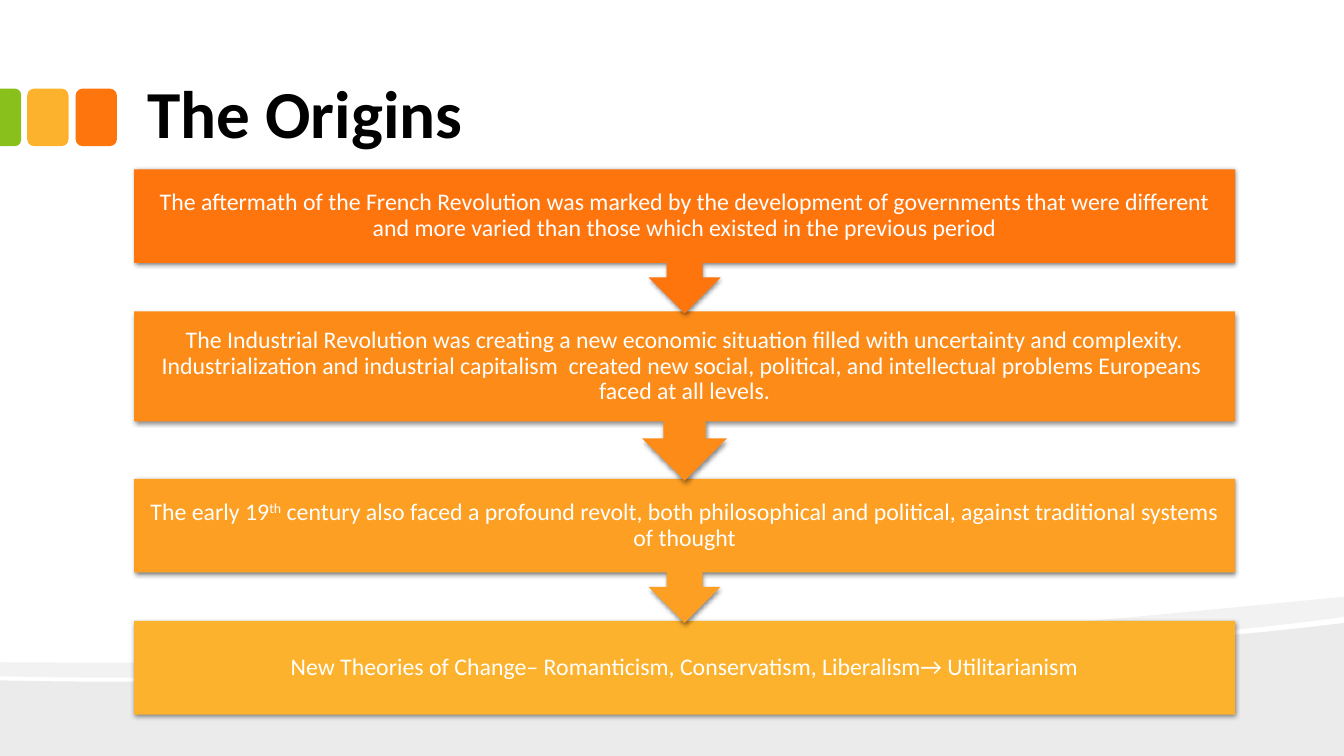
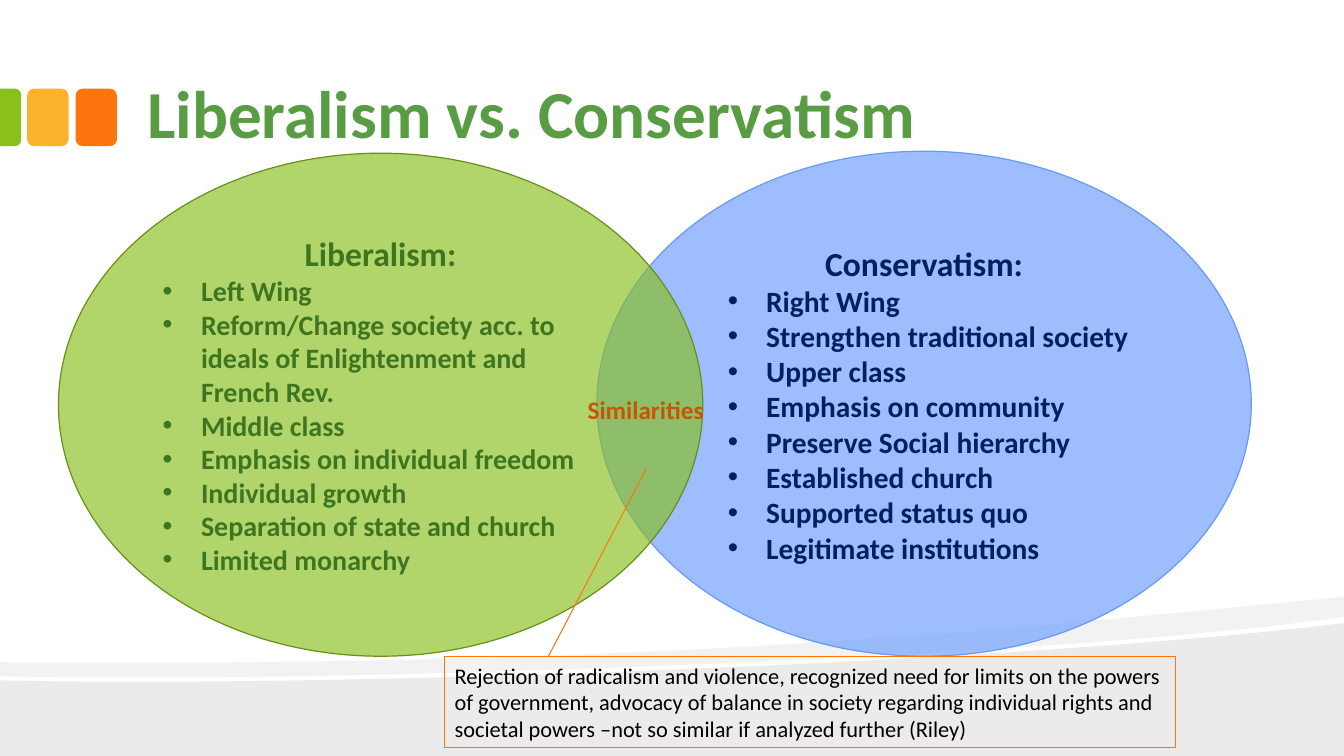
from dataclasses import dataclass
from itertools import accumulate

from lxml.etree import SubElement
from pptx import Presentation
from pptx.dml.color import RGBColor
from pptx.enum.shapes import MSO_CONNECTOR as Link, MSO_SHAPE as Shp
from pptx.enum.text import MSO_ANCHOR as Anchor, MSO_AUTO_SIZE as AutoSize, PP_ALIGN as Align
from pptx.oxml.ns import qn
from pptx.util import Emu, Inches, Pt

FONT = "Calibri"
ORANGE, AMBER, GREEN, BLUE = "FE750E", "FCB22C", "89C01C", "6699FF"
BLACK, WHITE = "000000", "FFFFFF"
WIDTH, HEIGHT = 13.33, 7.5
Point = tuple[float, float]


@dataclass(frozen=True)
class Box:
    """A place on the slide, in inches."""
    x: float
    y: float
    w: float
    h: float


@dataclass(frozen=True)
class Style:
    """The look of a run of text."""
    size: float
    color: str
    bold: bool = False


@dataclass(frozen=True)
class Step:
    """One stage of the flow; odd-numbered pieces of the text are superscript."""
    pieces: tuple[str, ...]
    height: float
    color: str
    kind: Shp = Shp.DOWN_ARROW_CALLOUT


@dataclass(frozen=True)
class Circle:
    """One side of the comparison."""
    box: Box
    fill: str
    opacity: int
    line: str
    ink: str
    size: float
    margin: float
    heading: str
    items: tuple[str, ...]


STEPS = (
    Step(("The aftermath of the French Revolution was marked by the development of governments "
          "that were different and more varied than those which existed in the previous period",),
         1.43, ORANGE),
    Step(("The Industrial Revolution was creating a new economic situation filled with uncertainty "
          "and complexity. Industrialization and industrial capitalism  created new social, "
          "political, and intellectual problems Europeans  faced at all levels.",),
         1.68, "FD8B18"),
    Step(("The early 19", "th", " century also faced a profound revolt, both philosophical and "
          "political, against traditional systems of thought"),
         1.43, "FD9F22"),
    Step(("New Theories of Change– Romanticism, Conservatism, Liberalism→ Utilitarianism",),
         0.93, AMBER, Shp.RECTANGLE),
)

CIRCLES = (
    Circle(Box(5.92, 1.5, 6.49, 5.01), BLUE, 64, BLUE, "002060", 21, 0.63, "Conservatism:",
           ("Right Wing", "Strengthen traditional society", "Upper class",
            "Emphasis on community", "Preserve Social hierarchy", "Established church",
            "Supported status quo", "Legitimate institutions")),
    Circle(Box(0.58, 1.52, 6.39, 4.99), GREEN, 65, "679015", "3E7520", 20, 0.38, "Liberalism:",
           ("Left Wing",
            "Reform/Change society acc. to ideals of Enlightenment and French Rev.",
            "Middle class", "Emphasis on individual freedom", "Individual growth",
            "Separation of state and church", "Limited monarchy")),
)


def rgb(color: str) -> RGBColor:
    """Turn a hex string into a colour."""
    return RGBColor.from_string(color)


def place(box: Box) -> tuple[Emu, ...]:
    """Return a box as lengths."""
    return tuple(Inches(v) for v in (box.x, box.y, box.w, box.h))


def paint(s, fill: str | None, opacity: int = 100, line: str | None = None) -> None:
    """Set the fill and outline of a shape and drop its shadow."""
    s.shadow.inherit = False
    if fill:
        s.fill.solid()
        s.fill.fore_color.rgb = rgb(fill)
        if opacity < 100:
            color = s.element.spPr.find(qn("a:solidFill"))[0]
            SubElement(color, qn("a:alpha"), val=str(opacity * 1000))
    else:
        s.fill.background()
    if line:
        s.line.color.rgb = rgb(line)
        s.line.width = Pt(0.85)
    else:
        s.line.fill.background()


def add_box(slide, kind: Shp, box: Box, fill: str | None, opacity: int = 100,
            line: str | None = None):
    """Add a painted preset shape."""
    s = slide.shapes.add_shape(kind, *place(box))
    paint(s, fill, opacity, line)
    return s


def add_run(p, text: str, style: Style, raised: bool = False) -> None:
    """Append a formatted run to a paragraph."""
    r = p.add_run()
    r.text = text
    r.font.name, r.font.size, r.font.bold = FONT, Pt(style.size), style.bold
    r.font.color.rgb = rgb(style.color)
    if raised:
        r._r.get_or_add_rPr().set("baseline", "30000")


def set_margins(tf, x: float, y: float) -> None:
    """Set the side and the top and bottom margins of a text frame."""
    tf.margin_left = tf.margin_right = Inches(x)
    tf.margin_top = tf.margin_bottom = Inches(y)


def add_bullet(p, margin: float) -> None:
    """Give a paragraph a hanging bullet."""
    pPr = p._p.get_or_add_pPr()
    pPr.set("marL", str(Inches(margin)))
    pPr.set("indent", str(-Inches(0.38)))
    SubElement(pPr, qn("a:buFont"), typeface="Arial")
    SubElement(pPr, qn("a:buChar"), char="•")


def add_soft_shadow(s) -> None:
    """Give a shape a soft shadow straight below it."""
    effects = s.element.spPr.find(qn("a:effectLst"))
    shadow = SubElement(effects, qn("a:outerShdw"), blurRad=str(Pt(3.5)), dist=str(Pt(1.1)),
                        dir="5400000", algn="ctr", rotWithShape="0")
    color = SubElement(shadow, qn("a:srgbClr"), val=BLACK)
    SubElement(color, qn("a:alpha"), val="45000")


def curve(a: Point, b: Point, c: Point, d: Point, steps: int = 24) -> list[Point]:
    """Sample a cubic curve, leaving out its first point."""
    points = []
    for i in range(1, steps + 1):
        t = i / steps
        weights = ((1 - t) ** 3, 3 * t * (1 - t) ** 2, 3 * t * t * (1 - t), t ** 3)
        points.append(tuple(sum(k * q[axis] for k, q in zip(weights, (a, b, c, d)))
                            for axis in (0, 1)))
    return points


def add_wave(slide, points: list[Point], opacity: int):
    """Add a closed translucent black outline."""
    start, *rest = [(Inches(x), Inches(y)) for x, y in points]
    builder = slide.shapes.build_freeform(*start)
    builder.add_line_segments(rest, close=True)
    s = builder.convert_to_shape()
    paint(s, BLACK, opacity)
    return s


def decorate_layout(layout, slide) -> None:
    """Put the waves, the colour tabs and the title's place on the layout."""
    ground = [(WIDTH, 6.18), (WIDTH, HEIGHT), (0, HEIGHT), (0, 6.75)]
    ground += curve((0, 6.75), (3.52, 6.83), (10.42, 6.55), (WIDTH, 6.18))
    band = [(WIDTH, 5.92), (WIDTH, 6.12)]
    band += curve((WIDTH, 6.12), (12.55, 6.23), (11.49, 6.33), (10.29, 6.41))
    band += curve((10.29, 6.41), (6.98, 6.63), (2.58, 6.77), (0, 6.71))
    band += [(0, 6.57)]
    band += curve((0, 6.57), (6.52, 6.62), (9.71, 6.27), (WIDTH, 5.92))
    edge_tab = add_box(slide, Shp.ROUND_2_SAME_RECTANGLE, Box(-0.18, 1.06, 0.57, 0.21), GREEN)
    edge_tab.rotation = 90
    edge_tab.adjustments[0] = 0.292
    decor = [add_wave(slide, ground, 8), add_wave(slide, band, 5), edge_tab]
    decor += [add_box(slide, Shp.ROUNDED_RECTANGLE, Box(x, 0.88, 0.41, 0.57), color)
              for x, color in ((0.27, AMBER), (0.75, ORANGE))]
    for i, s in enumerate(decor):
        layout.shapes.element.insert(2 + i, s.element)

    title = layout.placeholders[0]
    title.left, title.top, title.width, title.height = place(Box(1.33, 0.58, 10.66, 1))
    tf = title.text_frame
    tf.vertical_anchor, tf.auto_size = Anchor.BOTTOM, AutoSize.NONE
    set_margins(tf, 0.13, 0.07)


def set_title(slide, text: str, color: str) -> None:
    """Write the slide's title."""
    p = slide.shapes.title.text_frame.paragraphs[0]
    p.alignment = Align.LEFT
    add_run(p, text, Style(48, color, True))


def add_step(slide, step: Step, top: float) -> None:
    """Draw one stage of the flow."""
    s = add_box(slide, step.kind, Box(1.33, top, 10.92, step.height), step.color)
    add_soft_shadow(s)
    tf = s.text_frame
    tf.word_wrap, tf.vertical_anchor = True, Anchor.MIDDLE
    set_margins(tf, 0.13, 0.13)
    p = tf.paragraphs[0]
    p.alignment, p.line_spacing = Align.CENTER, 0.9
    for i, piece in enumerate(step.pieces):
        add_run(p, piece, Style(17, WHITE), raised=i % 2 == 1)


def add_circle(slide, circle: Circle) -> None:
    """Draw one side of the comparison with its list."""
    s = add_box(slide, Shp.OVAL, circle.box, circle.fill, circle.opacity, circle.line)
    tf = s.text_frame
    tf.word_wrap, tf.vertical_anchor = True, Anchor.MIDDLE
    p = tf.paragraphs[0]
    p.alignment = Align.CENTER
    add_run(p, circle.heading, Style(24, circle.ink, True))
    for item in circle.items:
        p = tf.add_paragraph()
        p.alignment = Align.LEFT
        add_bullet(p, circle.margin)
        add_run(p, item, Style(circle.size, circle.ink, True))


def add_similarities(slide) -> None:
    """Draw the label of the overlap, its leader line and its note."""
    leader = slide.shapes.add_connector(
        Link.STRAIGHT, *(Inches(v) for v in (5.44, 6.51, 6.41, 4.65)))
    leader.line.color.rgb = rgb(ORANGE)
    leader.line.width = Pt(0.75)
    SubElement(leader.element.spPr, qn("a:effectLst"))

    note = add_box(slide, Shp.RECTANGLE, Box(4.41, 6.51, 7.25, 0.91), None, line=ORANGE)
    tf = note.text_frame
    tf.word_wrap = True
    p = tf.paragraphs[0]
    p.alignment = Align.LEFT
    add_run(p, "Rejection of radicalism and violence, recognized need for limits on the powers of "
            "government, advocacy of balance in society regarding individual rights and societal "
            "powers –not so similar if analyzed further (Riley)", Style(16, BLACK))

    label = slide.shapes.add_textbox(*place(Box(5.73, 3.86, 1.51, 0.4)))
    label.text_frame.word_wrap = True
    add_run(label.text_frame.paragraphs[0], "Similarities", Style(18, "C85601", True))


def main() -> None:
    """Build the presentation."""
    prs = Presentation()
    prs.slide_width, prs.slide_height = Inches(WIDTH), Inches(HEIGHT)
    layout = prs.slide_layouts[5]
    origins, versus = (prs.slides.add_slide(layout) for _ in range(2))
    decorate_layout(layout, origins)

    set_title(origins, "The Origins", BLACK)
    tops = accumulate((step.height - 0.02 for step in STEPS[:-1]), initial=1.68)
    for step, top in reversed(list(zip(STEPS, tops))):
        add_step(origins, step, top)

    set_title(versus, "Liberalism vs. Conservatism", "589D44")
    for circle in CIRCLES:
        add_circle(versus, circle)
    add_similarities(versus)
    prs.save("out.pptx")


if __name__ == "__main__":
    main()
